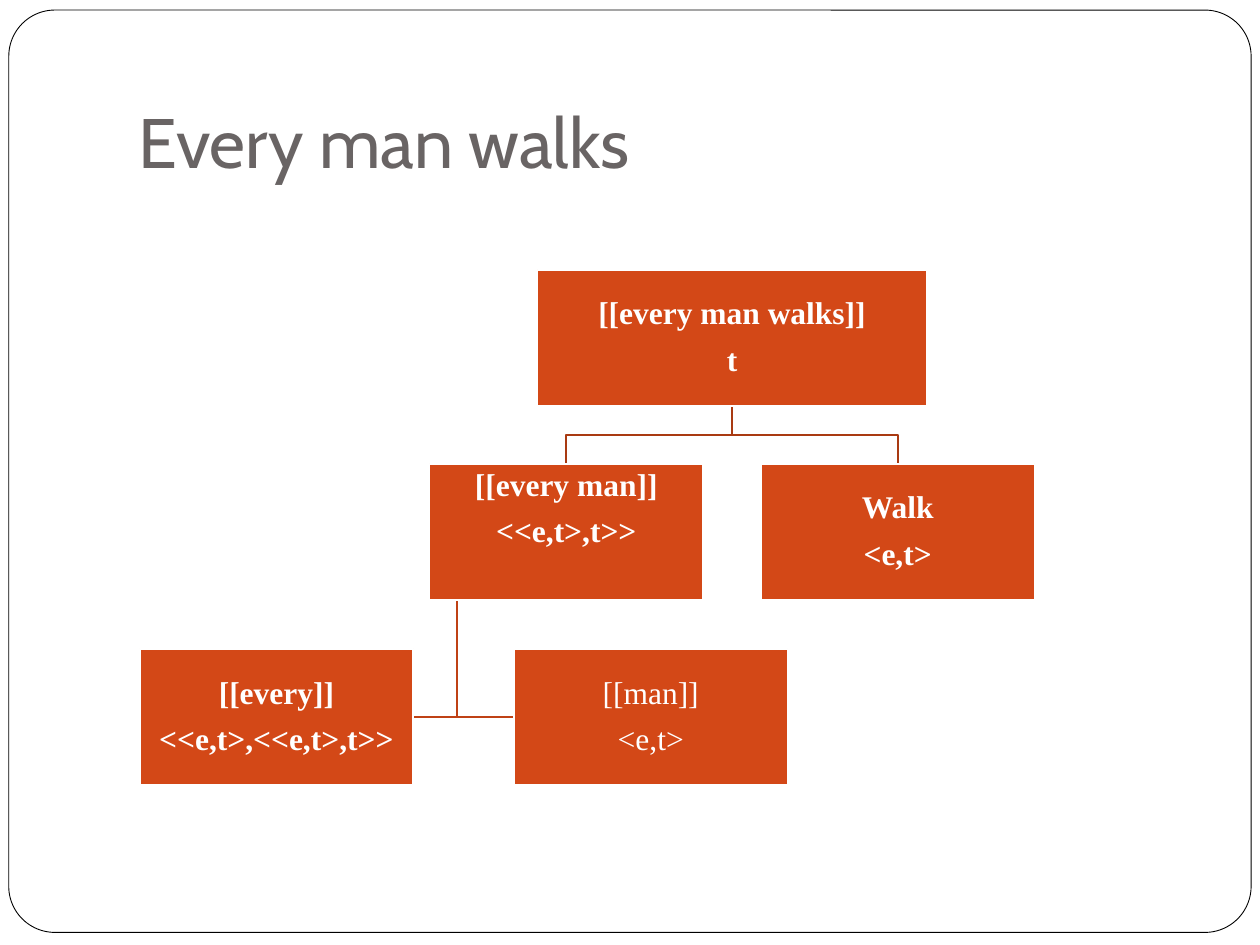
from collections import namedtuple

from pptx import Presentation, util as u
from pptx.dml.color import RGBColor
from pptx.enum import shapes, text

WHITE = RGBColor(0xFF, 0xFF, 0xFF)
BLACK = RGBColor(0, 0, 0)
TITLE_GREY = RGBColor(0x69, 0x64, 0x64)
NODE_ORANGE = RGBColor(0xD3, 0x48, 0x17)
UPPER_BRANCH = RGBColor(0xA9, 0x3A, 0x12)
LOWER_BRANCH = RGBColor(0xBF, 0x41, 0x15)

Box = namedtuple("Box", "left top width height")


def inches(box):
    return [u.Inches(side) for side in box]


def set_insets(frame, left, top, right, bottom):
    frame.margin_left, frame.margin_top = u.Inches(left), u.Inches(top)
    frame.margin_right, frame.margin_bottom = u.Inches(right), u.Inches(bottom)


def style_run(run, font, size, color, bold=False):
    run.font.name, run.font.size, run.font.bold = font, u.Pt(size), bold
    run.font.color.rgb = color


def add_panel(slide, kind, box, fill, line, line_width):
    panel = slide.shapes.add_shape(kind, *inches(box))
    panel.shadow.inherit = False
    panel.fill.solid()
    panel.fill.fore_color.rgb = fill
    panel.line.color.rgb = line
    panel.line.width = u.Pt(line_width)
    return panel


def add_frame(slide, box):
    frame = add_panel(slide, shapes.MSO_SHAPE.ROUNDED_RECTANGLE, box, WHITE, BLACK, 0.5)
    frame.adjustments[0] = 0.05


def add_title(slide, box, wording):
    frame = slide.shapes.add_textbox(*inches(box)).text_frame
    frame.word_wrap = True
    frame.vertical_anchor = text.MSO_ANCHOR.BOTTOM
    set_insets(frame, 0.1, 0.05, 0.1, 0.1)
    frame.text = wording
    style_run(frame.paragraphs[0].runs[0], "Cabin", 40, TITLE_GREY)


def add_node(slide, box, expression, meaning_type, bold=True, lift=0):
    """A tree node; lift is extra space kept free under its text."""
    node = add_panel(slide, shapes.MSO_SHAPE.RECTANGLE, box, NODE_ORANGE, WHITE, 1)
    frame = node.text_frame
    frame.word_wrap = True
    frame.vertical_anchor = text.MSO_ANCHOR.MIDDLE
    set_insets(frame, 0.01, 0.01, 0.01, 0.01 + lift)
    frame.text = f"{expression}\n{meaning_type}"
    for paragraph in frame.paragraphs:
        paragraph.alignment = text.PP_ALIGN.CENTER
        paragraph.line_spacing = 0.9
        style_run(paragraph.runs[0], "Times New Roman", 18, WHITE, bold)
    frame.paragraphs[0].space_after = u.Pt(7)


def add_branch(slide, points, color):
    start, *bends = [(u.Inches(x), u.Inches(y)) for x, y in points]
    builder = slide.shapes.build_freeform(*start)
    builder.add_line_segments(bends, close=False)
    branch = builder.convert_to_shape()
    branch.shadow.inherit = False
    branch.fill.background()
    branch.line.color.rgb = color
    branch.line.width = u.Pt(1)


def add_tree(slide, area):
    height, width, gap = 1.08, 2.17, 0.46
    middle_top = area.top + height + gap
    bottom_top = area.top + area.height - height

    # Node places: the sentence is centred over its two parts
    walk = Box(area.left + area.width - width, middle_top, width, height)
    every_man = Box(walk.left - gap - width, middle_top, width, height)
    center = (every_man.left + walk.left + width) / 2
    sentence = Box(center - 3.09 / 2, area.top, 3.09, height)
    every = Box(area.left, bottom_top, width, height)
    man = Box(every.left + width + 0.8, bottom_top, width, height)

    # Branches from the sentence down to its parts
    sentence_bottom = sentence.top + height
    fork = sentence_bottom + gap / 2
    for part in (walk, every_man):
        x = part.left + width / 2
        add_branch(slide, [(center, sentence_bottom), (center, fork),
                           (x, fork), (x, part.top)], UPPER_BRANCH)

    # Branches from the noun phrase to the facing sides of its words
    stem = every_man.left + width / 10
    level = bottom_top + height / 2
    for side in (man.left, every.left + width):
        add_branch(slide, [(stem, middle_top + height), (stem, level),
                           (side, level)], LOWER_BRANCH)

    # Nodes
    add_node(slide, sentence, "[[every man walks]]", "t")
    add_node(slide, every_man, "[[every man]]", "<<e,t>,t>>", lift=0.36)
    add_node(slide, every, "[[every]]", "<<e,t>,<<e,t>,t>>")
    add_node(slide, man, "[[man]]", "<e,t>", bold=False)
    add_node(slide, walk, "Walk", "<e,t>")


def main():
    deck = Presentation()
    deck.slide_width, deck.slide_height = u.Inches(10), u.Inches(7.5)
    slide = deck.slides.add_slide(deck.slide_layouts[6])
    add_frame(slide, Box(0.07, 0.08, 9.86, 7.32))
    add_title(slide, Box(1, 0.3, 8.5, 1.25), "Every man walks")
    add_tree(slide, Box(1.11, 2.14, 7.1, 4.09))
    deck.save("out.pptx")


if __name__ == "__main__":
    main()
